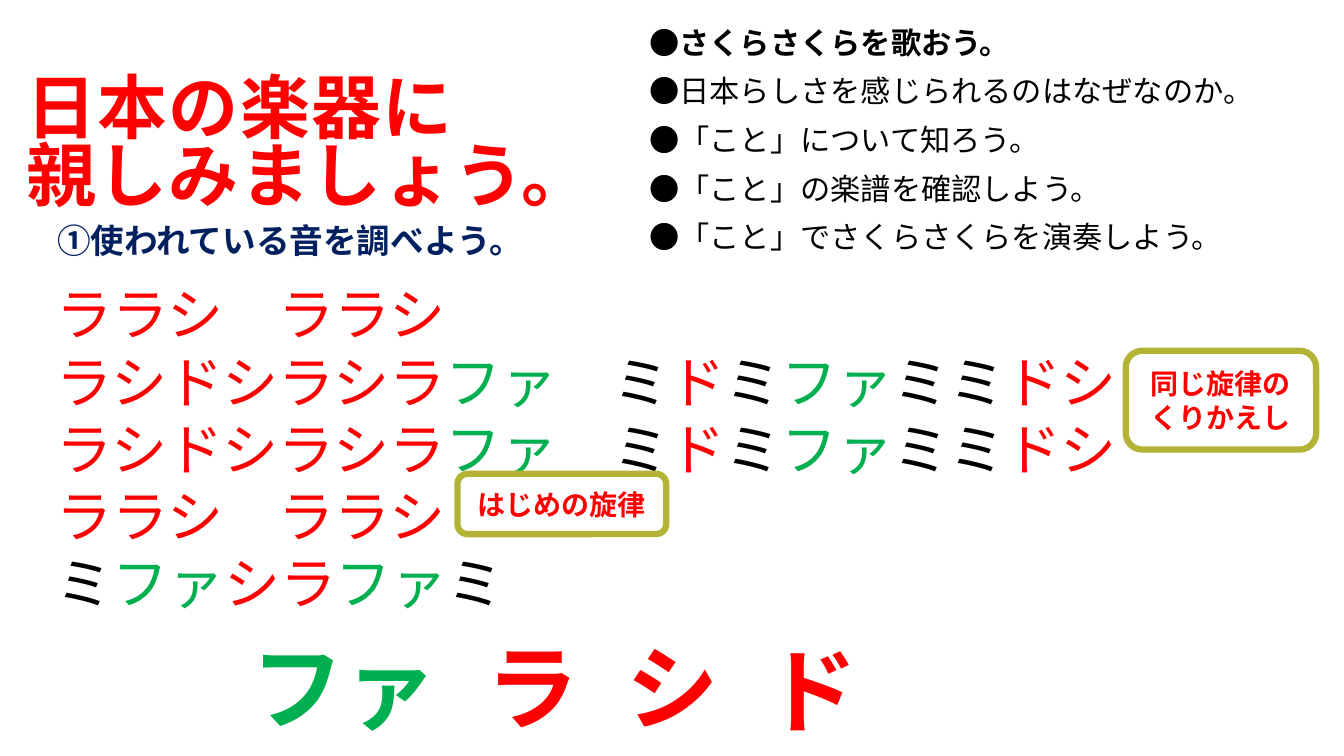
from dataclasses import dataclass
from itertools import groupby

from pptx import Presentation
from pptx.dml.color import RGBColor
from pptx.enum.shapes import MSO_SHAPE
from pptx.enum.text import MSO_ANCHOR, PP_ALIGN
from pptx.util import Cm, Pt

ROUNDED = MSO_SHAPE.ROUNDED_RECTANGLE
TOP, MIDDLE = MSO_ANCHOR.TOP, MSO_ANCHOR.MIDDLE
LEFT, CENTER = PP_ALIGN.LEFT, PP_ALIGN.CENTER


@dataclass(frozen=True)
class Theme:
    red: RGBColor = RGBColor(0xFF, 0x00, 0x00)
    green: RGBColor = RGBColor(0x00, 0xB0, 0x50)
    navy: RGBColor = RGBColor(0x00, 0x20, 0x60)
    black: RGBColor = RGBColor(0x00, 0x00, 0x00)
    white: RGBColor = RGBColor(0xFF, 0xFF, 0xFF)
    olive: RGBColor = RGBColor(0xB3, 0xB4, 0x35)
    title: Pt = Pt(50)
    subtitle: Pt = Pt(24)
    agenda: Pt = Pt(21.6)
    melody: Pt = Pt(40)
    callout: Pt = Pt(20)
    scale: Pt = Pt(66)
    border: Pt = Pt(4.5)


THEME = Theme()

AGENDA = [
    "●さくらさくらを歌おう。",
    "●日本らしさを感じられるのはなぜなのか。",
    "●「こと」について知ろう。",
    "●「こと」の楽譜を確認しよう。",
    "●「こと」でさくらさくらを演奏しよう。",
]
OPENING = "ララシ　ララシ"
REPEATED = "ラシドシラシラファ　ミドミファミミドシ"
MELODY = [OPENING, REPEATED, REPEATED, OPENING, "ミファシラファミ"]
SCALE = [
    ("ファ", 6.1, 15.75, 5.82),
    ("ラ", 12.01, 15.75, 3.91),
    ("シ", 15.54, 15.75, 3.91),
    ("ド", 19.05, 15.82, 3.91),
]
CALLOUTS = [
    (["同じ旋律の", "くりかえし"], (28.37, 8.84, 4.8, 2.49)),
    (["はじめの旋律"], (11.53, 11.94, 5.26, 1.52)),
]


def apply(target, values):
    for name, value in values.items():
        setattr(target, name, value)


def note_color(note):
    if note in "ファ":
        return THEME.green
    return THEME.black if note == "ミ" else THEME.red


def add_run(p, text, color, size, bold=False, font="Cambria"):
    r = p.add_run()
    r.text = text
    apply(r.font, {"name": font, "size": size, "bold": bold})
    r.font.color.rgb = color
    return r


def paragraphs(tf, lines):
    for i, line in enumerate(lines):
        yield (tf.add_paragraph() if i else tf.paragraphs[0]), line


def add_box(s, box, anchor=TOP, inset=0.25):
    tf = s.shapes.add_textbox(*map(Cm, box)).text_frame
    apply(tf, {"word_wrap": True, "vertical_anchor": anchor,
               "margin_left": Cm(inset), "margin_right": Cm(0.13)})
    return tf


def add_title(s):
    p = add_box(s, (0.41, 1.63, 14.91, 4.17), MIDDLE).paragraphs[0]
    p.line_spacing = 0.8
    for i, line in enumerate(["日本の楽器に", "親しみましょう。"]):
        if i:
            p.add_line_break()
        r = add_run(p, line, THEME.red, THEME.title, True, "Calibri")
        r.font._element.set("spc", "100")


def add_agenda(s):
    tf = add_box(s, (15.98, 0.66, 16.89, 7.98), inset=0.38)
    for p, line in paragraphs(tf, AGENDA):
        first = line == AGENDA[0]
        apply(p, {"line_spacing": 0.8, "space_before": Pt(0 if first else 14)})
        add_run(p, line, THEME.black, THEME.agenda, first, "Cabin")


def add_notes(s, lines, box, size, bold=False):
    for p, line in paragraphs(add_box(s, box), lines):
        for color, notes in groupby(line, note_color):
            add_run(p, "".join(notes), color, size, bold)


def add_callout(s, lines, box):
    sp = s.shapes.add_shape(ROUNDED, *map(Cm, box))
    sp.shadow.inherit = False
    sp.fill.solid()
    sp.fill.fore_color.rgb = THEME.white
    sp.line.color.rgb = THEME.olive
    sp.line.width = THEME.border
    sp.text_frame.vertical_anchor = MIDDLE
    for p, line in paragraphs(sp.text_frame, lines):
        p.alignment = CENTER
        add_run(p, line, THEME.red, THEME.callout, True)


def main():
    prs = Presentation()
    apply(prs, {"slide_width": Cm(33.87), "slide_height": Cm(19.05)})
    s = prs.slides.add_slide(prs.slide_layouts[6])
    add_agenda(s)
    add_notes(s, MELODY, (1.17, 6.93, 27.76, 8.81), THEME.melody)
    for lines, box in CALLOUTS:
        add_callout(s, lines, box)
    for note, left, top, width in SCALE:
        add_notes(s, [note], (left, top, width, 3.07), THEME.scale, True)
    subtitle = add_box(s, (1.19, 5.41, 14.12, 1.27)).paragraphs[0]
    add_run(subtitle, "①使われている音を調べよう。", THEME.navy, THEME.subtitle, True)
    add_title(s)
    prs.save("out.pptx")


if __name__ == "__main__":
    main()
